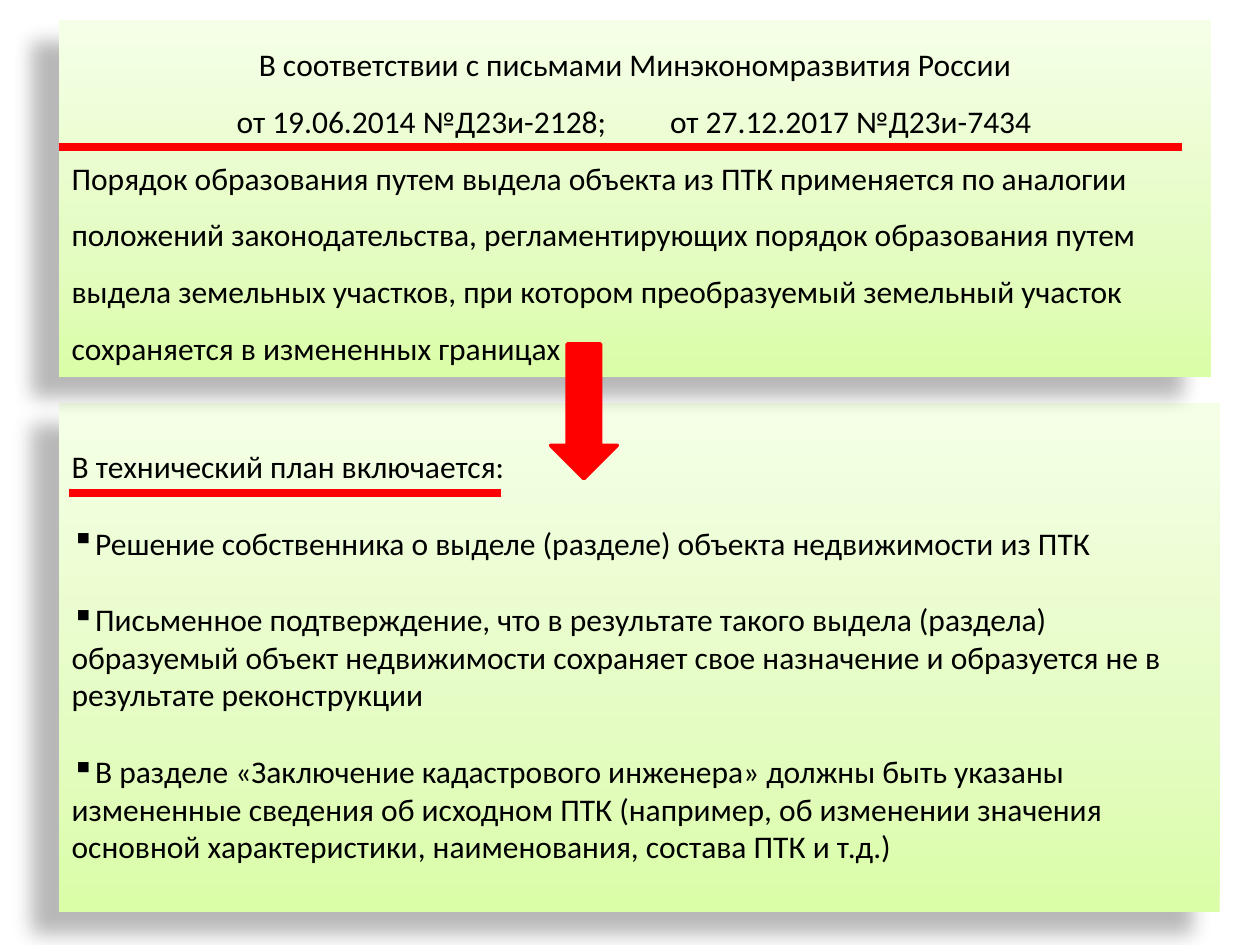
from copy import deepcopy

from lxml import etree
from pptx import Presentation
from pptx import util as u
from pptx.dml.color import RGBColor
from pptx.enum import shapes, text
from pptx.oxml import ns

BLACK = RGBColor(0x00, 0x00, 0x00)
RED = RGBColor(0xFF, 0x00, 0x00)
GREEN_STOPS = (
    (0, RGBColor(0xDA, 0xFD, 0xA7)),
    (0.35, RGBColor(0xE4, 0xFC, 0xC2)),
    (1, RGBColor(0xF5, 0xFF, 0xE7)),
)
WIDTH, HEIGHT = 10, 7.5
LEFT = 0.47
LINE_GAP = 22
DATE_TABS = (1.31, 4.75)

REQUIREMENTS = (
    "Решение собственника о выделе (разделе) объекта недвижимости из ПТК",
    "Письменное подтверждение, что в результате такого выдела (раздела) образуемый "
    "объект недвижимости сохраняет свое назначение и образуется не в результате реконструкции",
    "В разделе «Заключение кадастрового инженера» должны быть указаны измененные сведения "
    "об исходном ПТК (например, об изменении значения основной характеристики, "
    "наименования, состава ПТК и т.д.)",
)


def add_child(parent, tag, **attributes):
    child = etree.SubElement(parent, ns.qn(tag))
    for name, value in attributes.items():
        child.set(name, str(value))
    return child


def fill_gradient(shape):
    """Fade from the deep green at the bottom to the pale green at the top."""
    shape.fill.gradient()
    shape.fill.gradient_angle = 90
    stop_list = shape._element.spPr.find(".//" + ns.qn("a:gsLst"))
    stop_list.append(deepcopy(stop_list[0]))
    for stop, (position, color) in zip(shape.fill.gradient_stops, GREEN_STOPS):
        stop.position = position
        stop.color.rgb = color


def cast_shadow(shape):
    """Cast a soft shadow down and to the left."""
    shape.shadow.inherit = False
    effects = shape._element.spPr.find(ns.qn("a:effectLst"))
    shadow = add_child(effects, "a:outerShdw", blurRad=u.Pt(11.8), dist=u.Pt(19.7),
                       dir=141 * 60000, algn="tl", rotWithShape=0)
    color = add_child(shadow, "a:srgbClr", val=BLACK)
    add_child(color, "a:alpha", val=28000)


def add_panel(slide, left, top, width, height, top_inset=0.05):
    panel = slide.shapes.add_shape(shapes.MSO_SHAPE.RECTANGLE, u.Inches(left),
                                   u.Inches(top), u.Inches(width), u.Inches(height))
    fill_gradient(panel)
    panel.line.fill.background()
    cast_shadow(panel)
    frame = panel.text_frame
    frame.word_wrap = True
    frame.vertical_anchor = text.MSO_ANCHOR.TOP
    frame.margin_top = u.Inches(top_inset)
    return frame


def add_text(frame, content, align=text.PP_ALIGN.LEFT, spacing=1.0, before=0,
             bullet=None, tabs=()):
    """Write one paragraph, using the frame's first one while it is empty."""
    first = frame.paragraphs[0]
    paragraph = frame.add_paragraph() if first.runs else first
    properties = paragraph._p.get_or_add_pPr()
    if bullet:
        add_child(properties, "a:buChar", char=bullet)
    if tabs:
        tab_list = add_child(properties, "a:tabLst")
        for position in tabs:
            add_child(tab_list, "a:tab", pos=u.Inches(position), algn="l")
    paragraph.alignment = align
    paragraph.line_spacing = spacing
    if before:
        paragraph.space_before = u.Pt(before)
    run = paragraph.add_run()
    run.text = content
    run.font.name = "Calibri"
    run.font.size = u.Pt(18)
    run.font.color.rgb = BLACK


def add_rule(slide, start, end, y):
    rule = slide.shapes.add_connector(shapes.MSO_CONNECTOR.STRAIGHT, u.Inches(start),
                                      u.Inches(y), u.Inches(end), u.Inches(y))
    rule.line.color.rgb = RED
    rule.line.width = u.Pt(4.5)
    add_child(rule._element.spPr, "a:effectLst")


def add_down_arrow(slide, left, top, width, height):
    arrow = slide.shapes.add_shape(shapes.MSO_SHAPE.DOWN_ARROW, u.Inches(left),
                                   u.Inches(top), u.Inches(width), u.Inches(height))
    arrow.shadow.inherit = False
    arrow.fill.solid()
    arrow.fill.fore_color.rgb = RED
    arrow.line.color.rgb = RED
    arrow.line.width = u.Pt(2)


def add_requirements(slide):
    frame = add_panel(slide, LEFT, 3.2, 9.21, 4.04, top_inset=0.35)
    add_text(frame, "В технический план включается:")
    for requirement in REQUIREMENTS:
        add_text(frame, requirement, before=LINE_GAP, bullet="▪")


def add_letters(slide):
    frame = add_panel(slide, LEFT, 0.16, 9.14, 2.83)
    add_text(frame, "В соответствии с письмами Минэкономразвития России",
             align=text.PP_ALIGN.CENTER, spacing=1.5)
    add_text(frame, "\tот 19.06.2014 №Д23и-2128;\tот 27.12.2017 №Д23и-7434",
             spacing=1.5, tabs=DATE_TABS)
    add_text(frame, "Порядок образования путем выдела объекта из ПТК применяется по аналогии "
             "положений законодательства, регламентирующих порядок образования путем "
             "выдела земельных участков, при котором преобразуемый земельный участок "
             "сохраняется в измененных границах", spacing=1.5)


def main():
    presentation = Presentation()
    presentation.slide_width = u.Inches(WIDTH)
    presentation.slide_height = u.Inches(HEIGHT)
    slide = presentation.slides.add_slide(presentation.slide_layouts[6])
    add_requirements(slide)
    add_letters(slide)
    add_down_arrow(slide, 4.37, 2.73, 0.53, 1.07)
    add_rule(slide, LEFT, 9.38, 1.17)
    add_rule(slide, 0.55, 3.98, 3.91)
    presentation.save("out.pptx")


if __name__ == "__main__":
    main()
